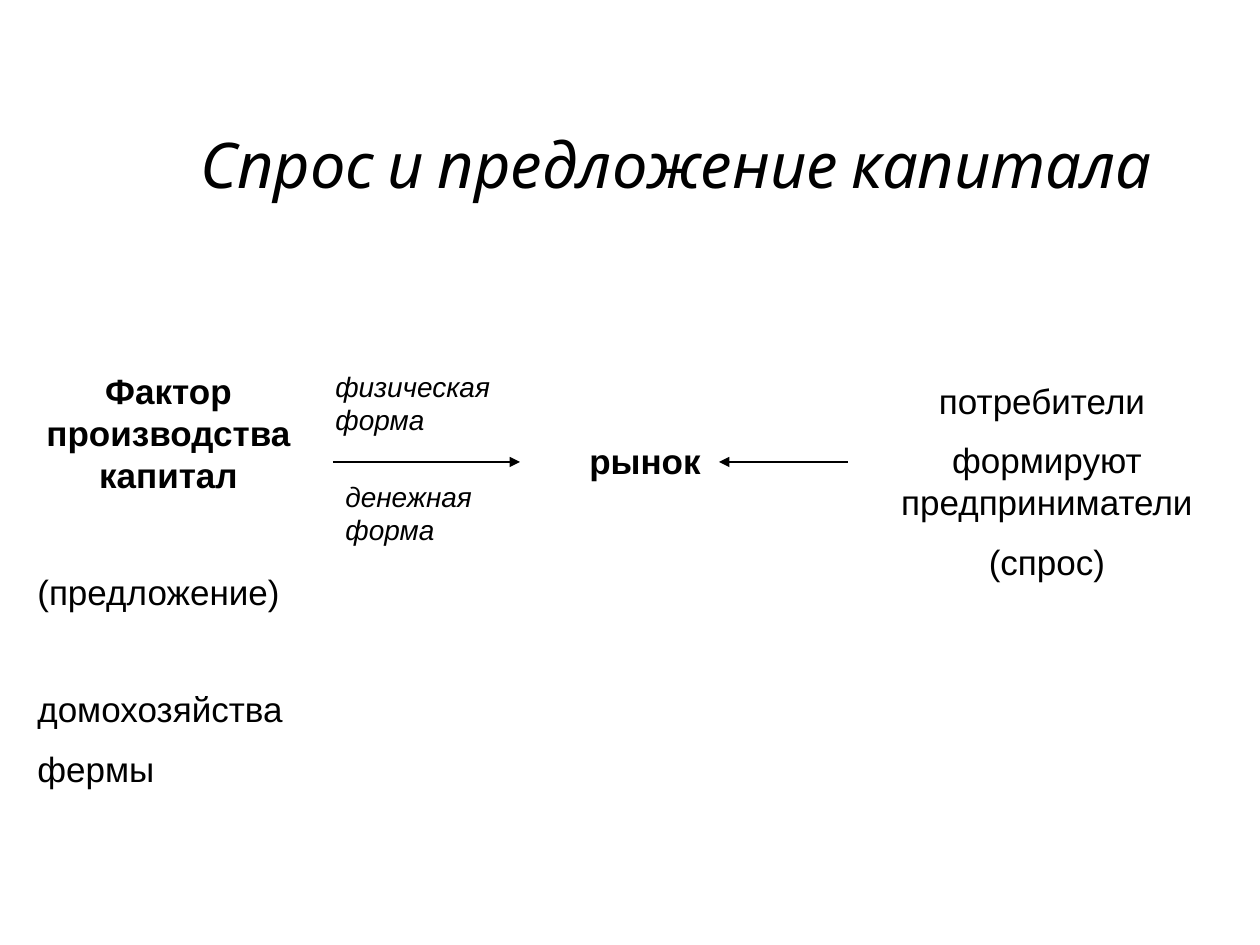
"""Build the slide on supply and demand for capital."""
from dataclasses import dataclass

from lxml import etree
from pptx import Presentation
from pptx.dml.color import RGBColor
from pptx.enum.shapes import MSO_CONNECTOR
from pptx.enum.text import MSO_ANCHOR, PP_ALIGN
from pptx.oxml.ns import qn
from pptx.util import Pt

LEFT, CENTER, RIGHT = PP_ALIGN.LEFT, PP_ALIGN.CENTER, PP_ALIGN.RIGHT
MIDDLE = MSO_ANCHOR.MIDDLE
STRAIGHT = MSO_CONNECTOR.STRAIGHT
TITLE_ONLY = 5
PX = 914400 / 126


@dataclass(frozen=True)
class Theme:
    ink: RGBColor = RGBColor(0, 0, 0)
    title_font: str = "Karla"
    body_font: str = "Arial"
    title: int = 36
    body: int = 20
    label: int = 16
    line: float = 0.75
    gap: int = 10
    wide_gap: int = 43


class Deck:
    def __init__(self, width, height, theme):
        self.theme = theme
        self.prs = Presentation()
        self.prs.slide_width, self.prs.slide_height = self.emu(width, height)
        self.s = self.prs.slides.add_slide(self.prs.slide_layouts[TITLE_ONLY])

    def emu(self, *lengths):
        return [round(n * PX) for n in lengths]

    def font(self, p, name, size, bold=False, italic=False):
        f = p.font
        f.name, f.size, f.bold, f.italic = name, Pt(size), bold, italic
        f.color.rgb = self.theme.ink

    def title(self, text, *box):
        sp = self.s.shapes.title
        sp.left, sp.top, sp.width, sp.height = self.emu(*box)
        tf = sp.text_frame
        tf.text, tf.vertical_anchor = text, MIDDLE
        p = tf.paragraphs[0]
        p.alignment = RIGHT
        self.font(p, self.theme.title_font, self.theme.title, italic=True)

    def text(self, box, *lines, size=None, align=LEFT, bold=False, italic=False):
        tf = self.s.shapes.add_textbox(*self.emu(*box)).text_frame
        tf.word_wrap = True
        for i, line in enumerate(lines):
            p = tf.add_paragraph() if i else tf.paragraphs[0]
            p.text, p.alignment = line, align
            if i:
                p.space_before = Pt(self.theme.gap)
            self.font(p, self.theme.body_font, size or self.theme.body, bold, italic)
        return tf

    def arrow(self, start, end, y):
        line = self.s.shapes.add_connector(STRAIGHT, *self.emu(start, y, end, y))
        line.line.color.rgb = self.theme.ink
        line.line.width = Pt(self.theme.line)
        etree.SubElement(line.line._get_or_add_ln(), qn("a:tailEnd"), type="triangle")
        etree.SubElement(line._element.spPr, qn("a:effectLst"))


def main():
    theme = Theme()
    deck = Deck(1260, 945, theme)
    deck.title("Спрос и предложение капитала", 94, 84, 1071, 158)

    supply = deck.text((25, 363, 287, 454), "Фактор производства капитал",
                       "(предложение)", "домохозяйства", "фермы")
    factor, offer, households, _ = supply.paragraphs
    factor.alignment, factor.font.bold = CENTER, True
    for p in (offer, households):
        p.space_before = Pt(theme.wide_gap)

    for x, y, form in ((323, 363, "физическая форма"), (333, 473, "денежная форма")):
        deck.text((x, y, 238, 81), form, size=theme.label, italic=True)
    deck.text((541, 433, 208, 54), "рынок", align=CENTER, bold=True)
    deck.text((878, 373, 338, 223), "потребители ", "формируют предприниматели",
              "(спрос)", align=CENTER)
    for start, end in ((333, 520), (848, 719)):
        deck.arrow(start, end, 462)
    deck.prs.save("out.pptx")


if __name__ == "__main__":
    main()
